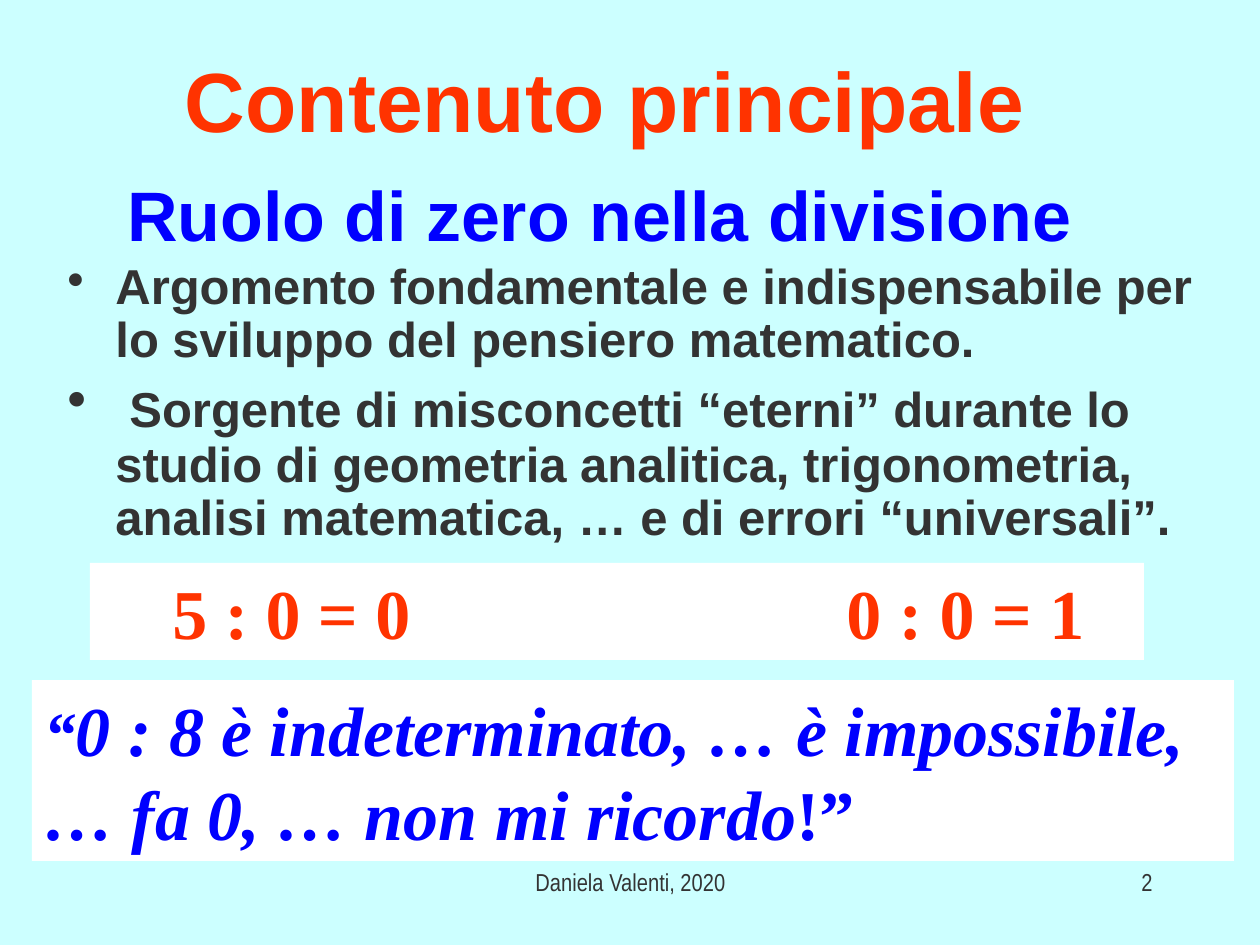
from lxml.etree import SubElement
from pptx import Presentation
from pptx.dml.color import RGBColor
from pptx.enum.shapes import MSO_SHAPE
from pptx.enum.text import MSO_ANCHOR, PP_ALIGN
from pptx.oxml.ns import qn
from pptx.util import Emu, Pt

COLORS = {"sky": "CCFFFF", "red": "FF3300", "blue": "0000FF",
          "gray": "333333", "white": "FFFFFF"}
SCALE = 914400 / 126
SANS, SERIF, NARROW = "Arial", "Times New Roman", "Arial Narrow"


def px(n):
    return Emu(round(n * SCALE))


def write(par, text, name, size, color, **style):
    run = par.add_run()
    run.text = text
    run.font.color.rgb = RGBColor.from_string(COLORS[color])
    for key, value in {"name": name, "size": Pt(size), **style}.items():
        setattr(run.font, key, value)


deck = Presentation()
deck.slide_width, deck.slide_height = px(1260), px(945)
slide = deck.slides.add_slide(deck.slide_layouts[6])
slide.background.fill.solid()
slide.background.fill.fore_color.rgb = RGBColor.from_string(COLORS["sky"])

# Plain text: box, anchor, alignment, then the run
bold = {"bold": True}
LINES = [
    ((45, 38, 1120, 121), MSO_ANCHOR.MIDDLE, PP_ALIGN.CENTER,
     ("Contenuto principale", SANS, 48, "red"), bold),
    ((115, 165, 1096, 97), MSO_ANCHOR.TOP, PP_ALIGN.LEFT,
     ("Ruolo di zero nella divisione", SANS, 40, "blue"), bold),
    ((431, 861, 399, 63), MSO_ANCHOR.TOP, PP_ALIGN.CENTER,
     ("Daniela Valenti, 2020", NARROW, 14, "gray"), {}),
    ((903, 861, 262, 63), MSO_ANCHOR.TOP, PP_ALIGN.RIGHT,
     ("2", NARROW, 14, "gray"), {}),
]
for box, anchor, align, words, style in LINES:
    frame = slide.shapes.add_textbox(*map(px, box)).text_frame
    frame.word_wrap = True
    frame.vertical_anchor = anchor
    par = frame.paragraphs[0]
    par.alignment = align
    write(par, *words, **style)

# Bulleted list
frame = slide.shapes.add_textbox(*map(px, (55, 256, 1156, 302))).text_frame
frame.word_wrap = True
first, second = frame.paragraphs[0], frame.add_paragraph()
for par, gap in ((first, 5.6), (second, 6.4)):
    par.line_spacing = 0.9
    par.space_before = Pt(gap)
    props = par._p.get_or_add_pPr()
    props.set("marL", str(px(48)))
    props.set("indent", str(px(-48)))
    SubElement(props, qn("a:buChar"), char="•")
write(first, "Argomento fondamentale e indispensabile per lo sviluppo del "
      "pensiero matematico.", SANS, 28, "gray", bold=True)
write(second, " ", SERIF, 32, "gray")
write(second, "Sorgente di misconcetti “eterni” durante lo studio di geometria "
      "analitica, trigonometria, analisi matematica, … e di errori "
      "“universali”.", SANS, 28, "gray", bold=True)

# White panels
panels = []
for box in ((90, 563, 1054, 97), (32, 680, 1202, 181)):
    panel = slide.shapes.add_shape(MSO_SHAPE.RECTANGLE, *map(px, box))
    panel.shadow.inherit = False
    panel.fill.solid()
    panel.fill.fore_color.rgb = RGBColor.from_string(COLORS["white"])
    panel.line.fill.background()
    panel.text_frame.word_wrap = True
    panel.text_frame.vertical_anchor = MSO_ANCHOR.TOP
    par = panel.text_frame.paragraphs[0]
    par.alignment = PP_ALIGN.LEFT
    panels.append(par)
sums, quote = panels

tabs = SubElement(sums._p.get_or_add_pPr(), qn("a:tabLst"))
for stop in (70, 744):
    SubElement(tabs, qn("a:tab"), pos=str(px(stop)), algn="l")
write(sums, "\t5 : 0 = 0\t0 : 0 = 1", SERIF, 40, "red", bold=True)

quote.space_before = Pt(20)
for text, size, slant in (
        ("“", 36, True),
        ("0 : 8 è indeterminato, … è impossibile, … fa 0, … non mi ricordo",
         40, True),
        ("!”", 40, False)):
    write(quote, text, SERIF, size, "blue", bold=True, italic=slant)

deck.save("out.pptx")
